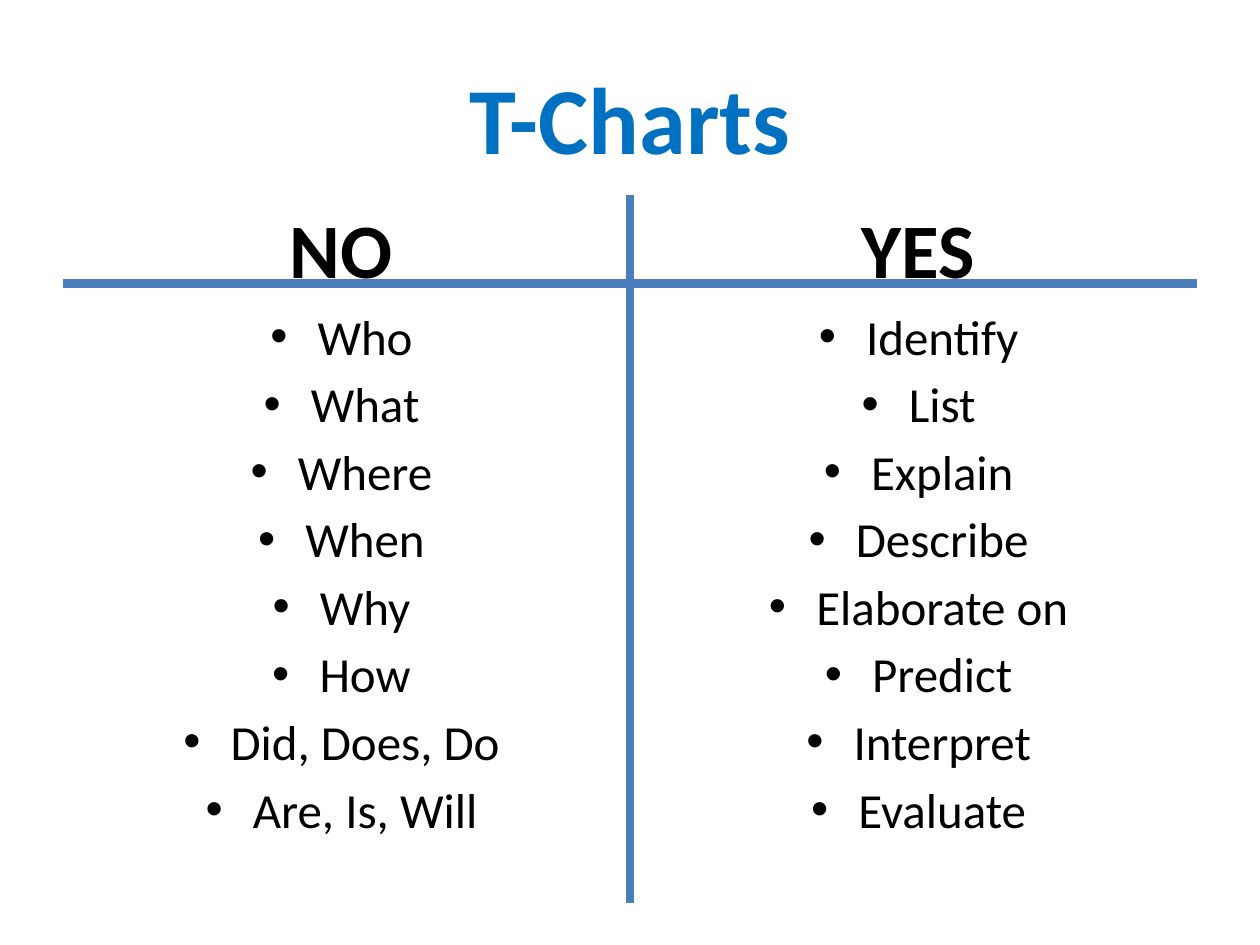
from lxml.etree import SubElement
from pptx import Presentation
from pptx.dml.color import RGBColor
from pptx.enum.shapes import MSO_CONNECTOR
from pptx.enum.text import MSO_ANCHOR, PP_ALIGN
from pptx.oxml.ns import qn
from pptx.util import Pt

TITLE = {"size": Pt(54), "bold": True, "name": "Calibri"}
HEADING = {"size": Pt(44), "bold": True, "name": "Calibri"}
ITEM = {"size": Pt(28), "bold": False, "name": "Calibri"}
BLUE, BLACK, RULE = "0070C0", "000000", "4B7EBC"
COLUMNS = [
    ("NO", ["Who", "What", "Where", "When", "Why", "How",
            "Did, Does, Do", "Are, Is, Will"]),
    ("YES", ["Identify", "List", "Explain", "Describe", "Elaborate on",
             "Predict", "Interpret", "Evaluate"]),
]


def color(value):
    return RGBColor.from_string(value)


def add_bullet(para):
    properties = para._p.get_or_add_pPr()
    properties.set("marL", str(Pt(27)))
    properties.set("indent", str(Pt(-27)))
    SubElement(properties, qn("a:buFont"), typeface="Arial")
    SubElement(properties, qn("a:buChar"), char="•")


def add_text(page, box, lines, style, ink, anchor, bulleted=False):
    left, top, width, height = box
    frame = page.shapes.add_textbox(Pt(left), Pt(top), Pt(width), Pt(height)).text_frame
    frame.word_wrap = True
    frame.vertical_anchor = anchor
    for index, line in enumerate(lines):
        para = frame.paragraphs[0] if index == 0 else frame.add_paragraph()
        para.alignment = PP_ALIGN.CENTER
        if bulleted:
            para.space_before = Pt(5)
            add_bullet(para)
        span = para.add_run()
        span.text = line
        span.font.color.rgb = color(ink)
        for name, value in style.items():
            setattr(span.font, name, value)


def add_column(page, box, heading, items):
    left, top, width, height = box
    heading_height = 50.4
    add_text(page, (left, top, width, heading_height), [heading], HEADING, BLACK,
             MSO_ANCHOR.BOTTOM)
    add_text(page, (left, top + heading_height, width, height - heading_height),
             items, ITEM, BLACK, MSO_ANCHOR.TOP, bulleted=True)


def add_rule(page, start, end):
    rule = page.shapes.add_connector(
        MSO_CONNECTOR.STRAIGHT, *(Pt(value) for value in (*start, *end)))
    rule.line.color.rgb = color(RULE)
    rule.line.width = Pt(5)
    SubElement(rule._element.spPr, qn("a:effectLst"))


def add_cross(page, box, crossbar):
    left, top, width, height = box
    middle = left + width / 2
    add_rule(page, (left, crossbar), (left + width, crossbar))
    add_rule(page, (middle, top), (middle, top + height))


def add_t_chart(page, box):
    left, top, width, height = box
    gap = 11.6
    column_width = (width - gap) / 2
    for index, (heading, items) in enumerate(COLUMNS):
        column_left = left + index * (column_width + gap)
        add_column(page, (column_left, top, column_width, height), heading, items)
    add_cross(page, (left, 111.6, width, 404.6), 162)


def main():
    deck = Presentation()
    deck.slide_width, deck.slide_height = Pt(720), Pt(540)
    page = deck.slides.add_slide(deck.slide_layouts[6])
    add_text(page, (36, 21.6, 648, 90), ["T-Charts"], TITLE, BLUE, MSO_ANCHOR.MIDDLE)
    add_t_chart(page, (36, 121, 648, 361.4))
    deck.save("out.pptx")


if __name__ == "__main__":
    main()
